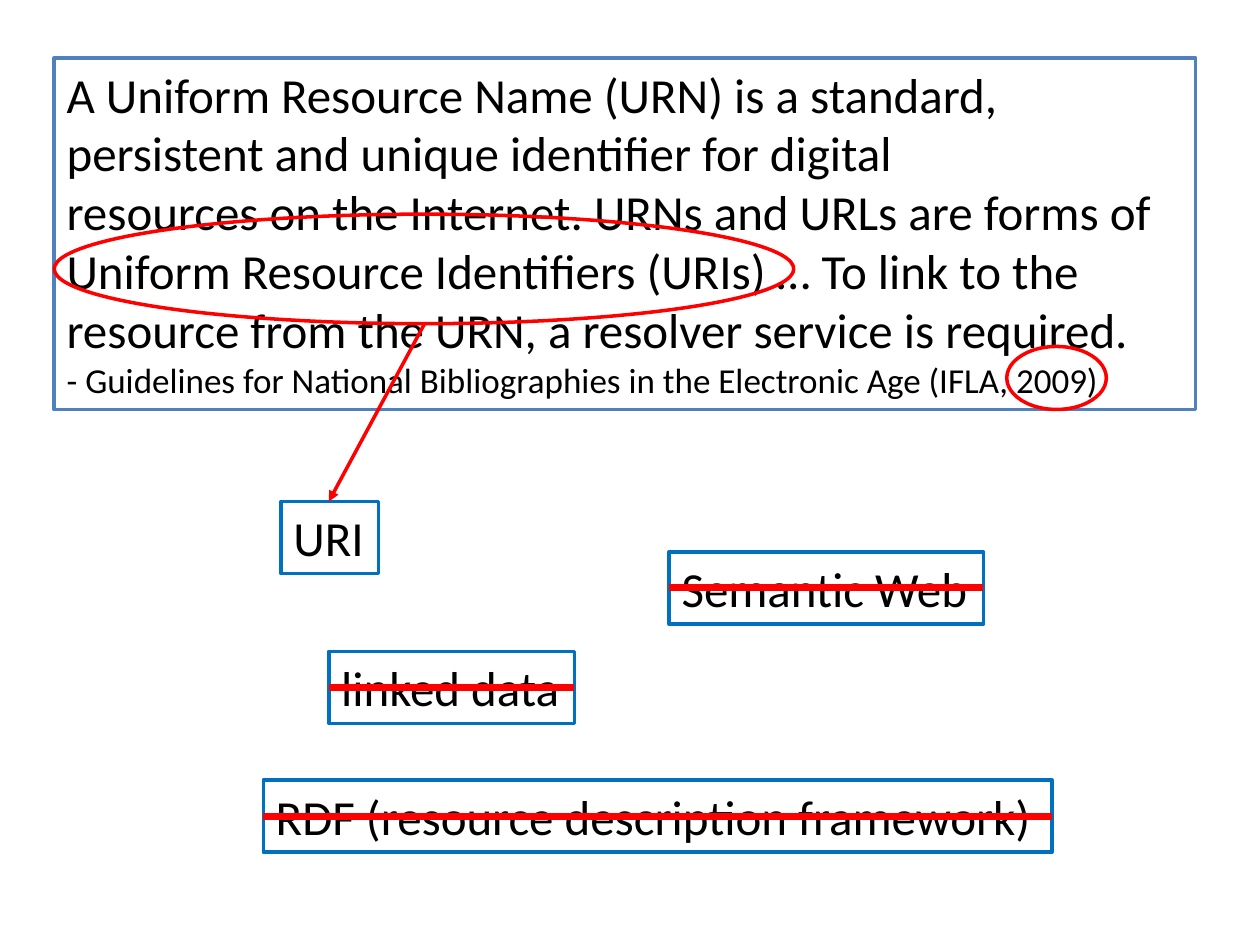
from pptx import Presentation
from pptx.dml.color import RGBColor
from pptx.enum.shapes import MSO_CONNECTOR, MSO_SHAPE
from pptx.enum.text import MSO_ANCHOR, MSO_AUTO_SIZE, PP_ALIGN
from pptx.oxml.ns import qn
from pptx.util import Pt
from lxml.etree import SubElement

BLACK = RGBColor(0x00, 0x00, 0x00)
WHITE = RGBColor(0xFF, 0xFF, 0xFF)
RED = RGBColor(0xFF, 0x00, 0x00)
QUOTE_BLUE = RGBColor(0x4F, 0x81, 0xBD)
TERM_BLUE = RGBColor(0x00, 0x70, 0xC0)

TERM_HEIGHT = 41.2
QUOTE = [
    ("A Uniform Resource Name (URN) is a standard, persistent and unique identifier for digital", 28),
    ("resources on the Internet. URNs and URLs are forms of Uniform Resource Identifiers (URIs) … "
     "To link to the resource from the URN, a resolver service is required.", 28),
    ("- Guidelines for National Bibliographies in the Electronic Age (IFLA, 2009)", 20),
]
TERMS = [
    ("URI", 160.6, 286.6, 55.6, False),
    ("Semantic Web", 382.4, 315.4, 179.6, True),
    ("linked data", 187.9, 372.2, 140.4, True),
    ("RDF (resource description framework)", 150.5, 445.8, 450.7, True),
]


def add_outline(page, kind, left, top, width, height, color):
    shape = page.shapes.add_shape(kind, Pt(left), Pt(top), Pt(width), Pt(height))
    shape.shadow.inherit = False
    shape.fill.background()
    shape.line.color.rgb = color
    shape.line.width = Pt(2)
    return shape


def add_text_box(page, lines, left, top, width, height, color, wrap):
    box = add_outline(page, MSO_SHAPE.RECTANGLE, left, top, width, height, color)
    box.fill.solid()
    box.fill.fore_color.rgb = WHITE
    frame = box.text_frame
    frame.text = "\n".join(text for text, size in lines)
    frame.word_wrap = wrap
    frame.auto_size = MSO_AUTO_SIZE.SHAPE_TO_FIT_TEXT
    frame.vertical_anchor = MSO_ANCHOR.TOP
    for paragraph, (text, size) in zip(frame.paragraphs, lines):
        paragraph.alignment = PP_ALIGN.LEFT
        for span in paragraph.runs:
            span.font.name = "Calibri"
            span.font.size = Pt(size)
            span.font.color.rgb = BLACK


def add_red_line(page, start, end, width, arrow=False):
    line = page.shapes.add_connector(
        MSO_CONNECTOR.STRAIGHT, Pt(start[0]), Pt(start[1]), Pt(end[0]), Pt(end[1]))
    line.line.color.rgb = RED
    line.line.width = Pt(width)
    if arrow:
        SubElement(line.line._get_or_add_ln(), qn("a:tailEnd"), type="triangle")
    SubElement(line._element.spPr, qn("a:effectLst"))


def main():
    deck = Presentation()
    deck.slide_width, deck.slide_height = Pt(720), Pt(540)
    page = deck.slides.add_slide(deck.slide_layouts[6])

    add_text_box(page, QUOTE, 31, 33.1, 652.3, 201, QUOTE_BLUE, True)
    add_outline(page, MSO_SHAPE.OVAL, 31, 122.4, 422.6, 62.6, RED)
    for text, left, top, width, struck in TERMS:
        add_text_box(page, [(text, 28)], left, top, width, TERM_HEIGHT, TERM_BLUE, False)
        if struck:
            middle = top + TERM_HEIGHT / 2
            add_red_line(page, (left, middle), (left + width, middle), 4)
    add_red_line(page, (242.6, 185), (187.9, 286.6), 2, arrow=True)
    add_outline(page, MSO_SHAPE.OVAL, 575.3, 198, 56.9, 36, RED)

    deck.save("out.pptx")


if __name__ == "__main__":
    main()
